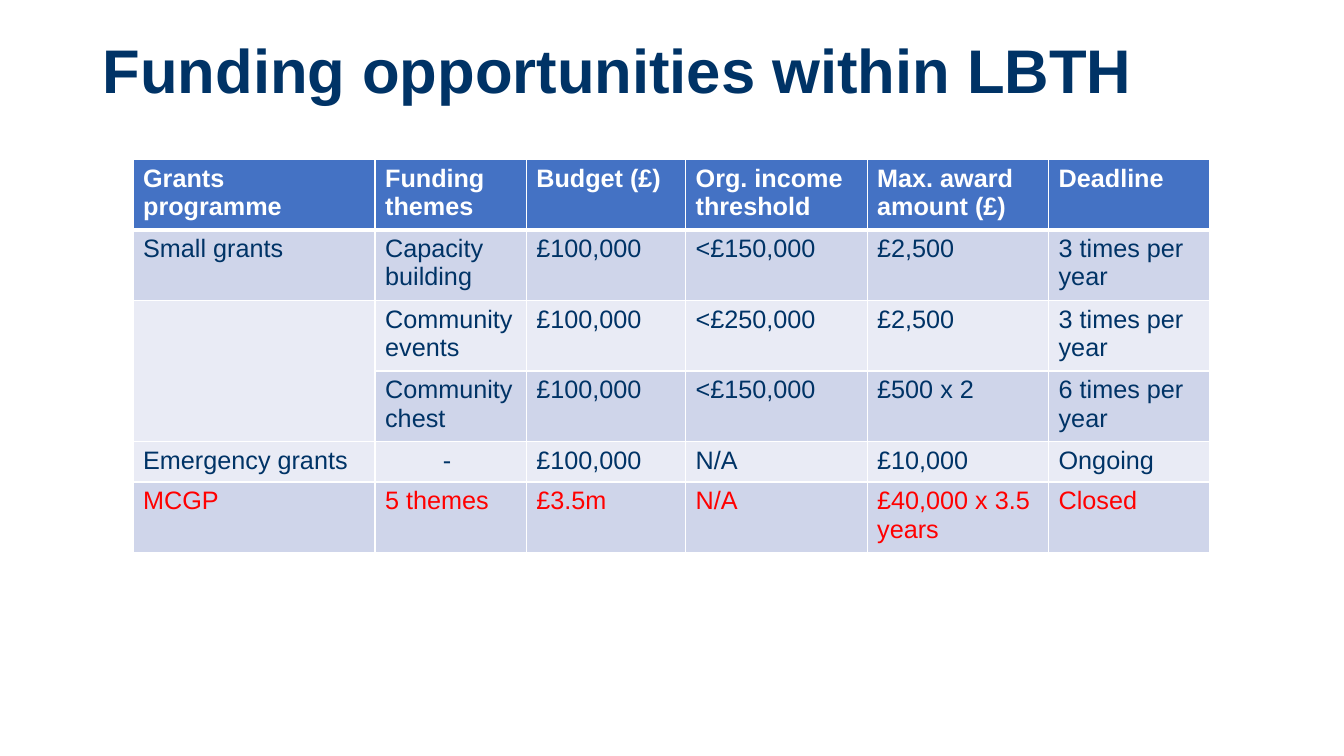
from pptx import Presentation
from pptx.dml.color import RGBColor
from pptx.enum.text import MSO_ANCHOR, PP_ALIGN
from pptx.oxml.ns import qn
from pptx.util import Inches, Pt
from lxml import etree

MIDDLE = MSO_ANCHOR.MIDDLE
LEFT, CENTER = PP_ALIGN.LEFT, PP_ALIGN.CENTER

COLORS = {
    "navy": "003366",
    "white": "FFFFFF",
    "red": "FF0000",
    "header": "4472C4",
    "odd_row": "CFD5EA",
    "even_row": "E9EBF5",
}
FONT = "Arial"

COLUMN_WIDTHS = [2.4, 1.5, 1.58, 1.8, 1.8, 1.6]
ROW_HEIGHTS = [0.66, 0.66, 0.66, 0.66, 0.4, 0.66]
GRANTS = [
    ["Grants\nprogramme", "Funding themes", "Budget (£)",
     "Org. income threshold", "Max. award amount (£)", "Deadline"],
    ["Small grants", "Capacity building", "£100,000", "<£150,000", "£2,500", "3 times per year"],
    ["", "Community events", "£100,000", "<£250,000", "£2,500", "3 times per year"],
    ["", "Community chest", "£100,000", "<£150,000", "£500 x 2", "6 times per year"],
    ["Emergency grants", "- ", "£100,000", "N/A", "£10,000", "Ongoing"],
    ["MCGP", "5 themes", "£3.5m", "N/A", "£40,000 x 3.5 years", "Closed"],
]
CLOSED_ROW = len(GRANTS) - 1


def rgb(name):
    return RGBColor.from_string(COLORS[name])


def style_text(text_frame, size, color, bold, alignment=LEFT):
    for paragraph in text_frame.paragraphs:
        paragraph.alignment = alignment
        paragraph.font.name = FONT
        paragraph.font.size = Pt(size)
        paragraph.font.bold = bold
        paragraph.font.color.rgb = rgb(color)


def add_title(slide, text):
    shape = slide.shapes.add_textbox(Inches(0.92), Inches(0), Inches(10.69), Inches(1.45))
    text_frame = shape.text_frame
    text_frame.word_wrap = True
    text_frame.vertical_anchor = MIDDLE
    text_frame.text = text
    text_frame.paragraphs[0].line_spacing = 0.9
    style_text(text_frame, 44, "navy", True)


def set_borders(cell, top, bottom):
    properties = cell._tc.get_or_add_tcPr()
    for side, width in (("L", 1), ("R", 1), ("T", top), ("B", bottom)):
        line = etree.SubElement(properties, qn(f"a:ln{side}"), w=str(Pt(width)))
        fill = etree.SubElement(line, qn("a:solidFill"))
        etree.SubElement(fill, qn("a:srgbClr"), val=COLORS["white"])


def fill_cell(cell, text, row):
    # Borders come before the fill in the cell properties
    set_borders(cell, top=3 if row == 1 else 1, bottom=3 if row == 0 else 1)
    cell.fill.solid()
    cell.text = text
    alignment = CENTER if text.strip() == "-" else LEFT
    if row == 0:
        background, color = "header", "white"
    else:
        background = "odd_row" if row % 2 else "even_row"
        color = "red" if row == CLOSED_ROW else "navy"
    cell.fill.fore_color.rgb = rgb(background)
    style_text(cell.text_frame, 18, color, row == 0, alignment)


def add_grants_table(slide):
    table = slide.shapes.add_table(
        len(GRANTS), len(COLUMN_WIDTHS), Inches(1.32), Inches(1.58),
        Inches(sum(COLUMN_WIDTHS)), Inches(sum(ROW_HEIGHTS))).table
    for column, width in zip(table.columns, COLUMN_WIDTHS):
        column.width = Inches(width)
    for table_row, height in zip(table.rows, ROW_HEIGHTS):
        table_row.height = Inches(height)
    for row, texts in enumerate(GRANTS):
        for column, text in enumerate(texts):
            fill_cell(table.cell(row, column), text, row)
    # One empty cell beside the other small grants
    table.cell(2, 0).merge(table.cell(3, 0))


def main():
    presentation = Presentation()
    presentation.slide_width = Inches(13.33)
    presentation.slide_height = Inches(7.5)
    slide = presentation.slides.add_slide(presentation.slide_layouts[6])
    add_title(slide, "Funding opportunities within LBTH")
    add_grants_table(slide)
    presentation.save("out.pptx")


if __name__ == "__main__":
    main()
